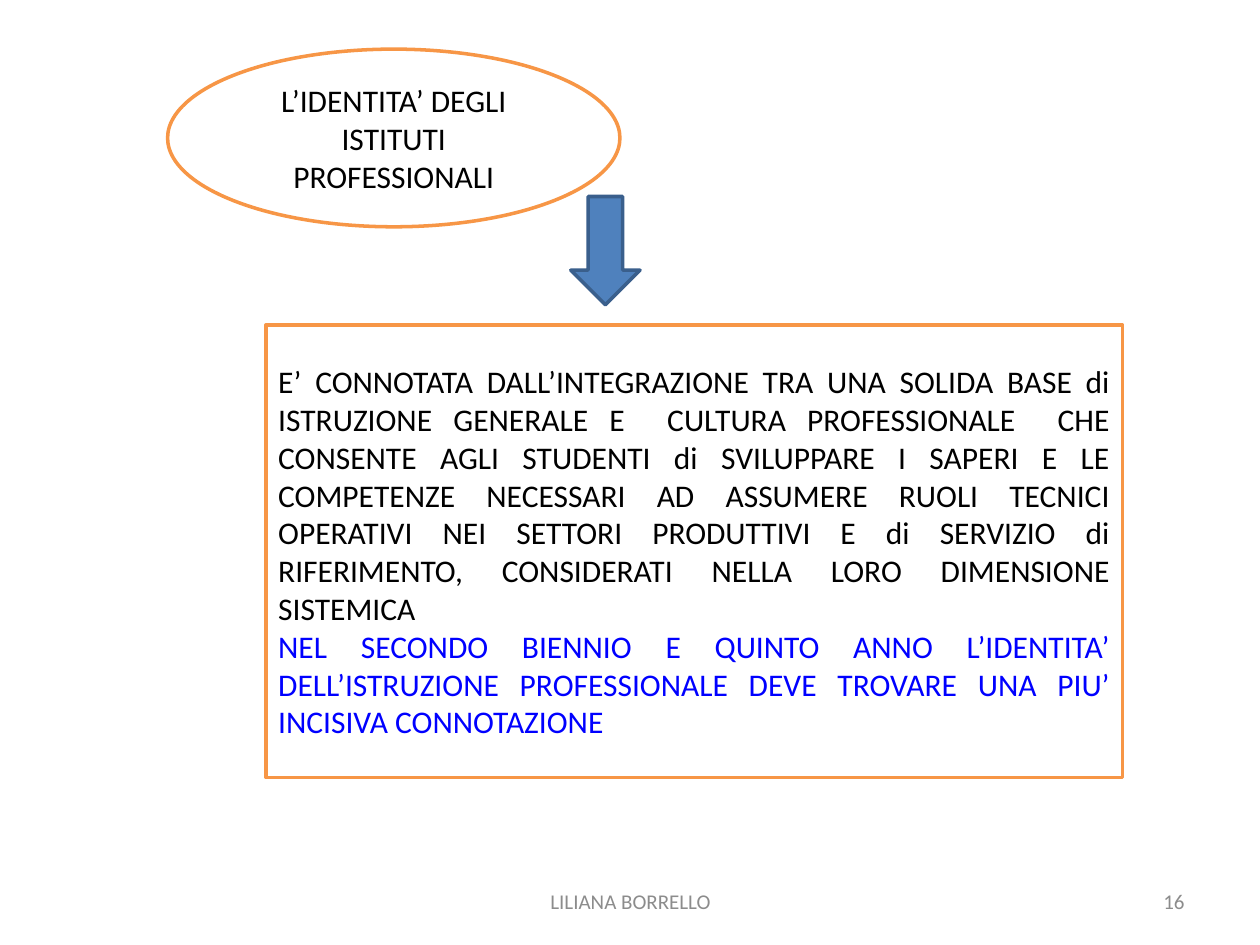
from pptx import Presentation
from pptx.dml.color import RGBColor
from pptx.enum.shapes import MSO_SHAPE
from pptx.enum.text import MSO_ANCHOR, PP_ALIGN
from pptx.util import Inches, Pt

ELLIPSE, RECT, ARROW = MSO_SHAPE.OVAL, MSO_SHAPE.RECTANGLE, MSO_SHAPE.DOWN_ARROW
CENTER, RIGHT, JUSTIFY = PP_ALIGN.CENTER, PP_ALIGN.RIGHT, PP_ALIGN.JUSTIFY
MIDDLE = MSO_ANCHOR.MIDDLE

BLACK, BLUE, GRAY, WHITE = "000000", "0000FF", "8C8C8C", "FFFFFF"
ORANGE, ARROW_FILL, ARROW_LINE = "F79646", "4F81BD", "3A5F8C"

IDENTITY = "L’IDENTITA’ DEGLI ISTITUTI PROFESSIONALI"
DESCRIPTION = (
    "E’ CONNOTATA DALL’INTEGRAZIONE TRA UNA SOLIDA BASE di ISTRUZIONE GENERALE "
    "E  CULTURA PROFESSIONALE  CHE CONSENTE AGLI STUDENTI di SVILUPPARE I SAPERI "
    "E LE COMPETENZE NECESSARI AD ASSUMERE RUOLI TECNICI OPERATIVI NEI SETTORI "
    "PRODUTTIVI E di SERVIZIO di RIFERIMENTO, CONSIDERATI NELLA LORO DIMENSIONE SISTEMICA"
)
CONCLUSION = (
    "NEL SECONDO BIENNIO E QUINTO ANNO L’IDENTITA’ DELL’ISTRUZIONE PROFESSIONALE "
    "DEVE TROVARE UNA PIU’ INCISIVA CONNOTAZIONE "
)


def color(value):
    return RGBColor.from_string(value)


class SlideBuilder:
    font = "Calibri"
    line_width = Pt(2)

    def __init__(self, slide):
        self.slide = slide

    def add_text(self, sp, paragraphs, size, align):
        tf = sp.text_frame
        tf.word_wrap = True
        tf.vertical_anchor = MIDDLE
        for i, (text, text_color) in enumerate(paragraphs):
            p = tf.add_paragraph() if i else tf.paragraphs[0]
            p.alignment = align
            r = p.add_run()
            r.text = text
            r.font.name = self.font
            r.font.size = Pt(size)
            r.font.color.rgb = color(text_color)

    def shape(self, kind, box, fill, line, paragraphs=(), align=CENTER):
        sp = self.slide.shapes.add_shape(kind, *map(Inches, box))
        sp.shadow.inherit = False
        sp.fill.solid()
        sp.fill.fore_color.rgb = color(fill)
        sp.line.color.rgb = color(line)
        sp.line.width = self.line_width
        self.add_text(sp, paragraphs, 18, align)

    def footer(self, box, text, align):
        sp = self.slide.shapes.add_textbox(*map(Inches, box))
        self.add_text(sp, [(text, GRAY)], 12, align)


def main():
    prs = Presentation()
    prs.slide_width, prs.slide_height = Inches(10), Inches(7.5)
    s = SlideBuilder(prs.slides.add_slide(prs.slide_layouts[6]))

    s.shape(ELLIPSE, (1.33, 0.39, 3.59, 1.41), WHITE, ORANGE, [(IDENTITY, BLACK)])
    s.shape(RECT, (2.11, 2.58, 6.8, 3.59), WHITE, ORANGE,
            [(DESCRIPTION, BLACK), (CONCLUSION, BLUE)], JUSTIFY)
    s.footer((3.42, 6.95, 3.17, 0.4), "LILIANA BORRELLO", CENTER)
    s.footer((7.17, 6.95, 2.33, 0.4), "16", RIGHT)
    s.shape(ARROW, (4.53, 1.56, 0.55, 0.86), ARROW_FILL, ARROW_LINE)

    prs.save("out.pptx")


if __name__ == "__main__":
    main()
